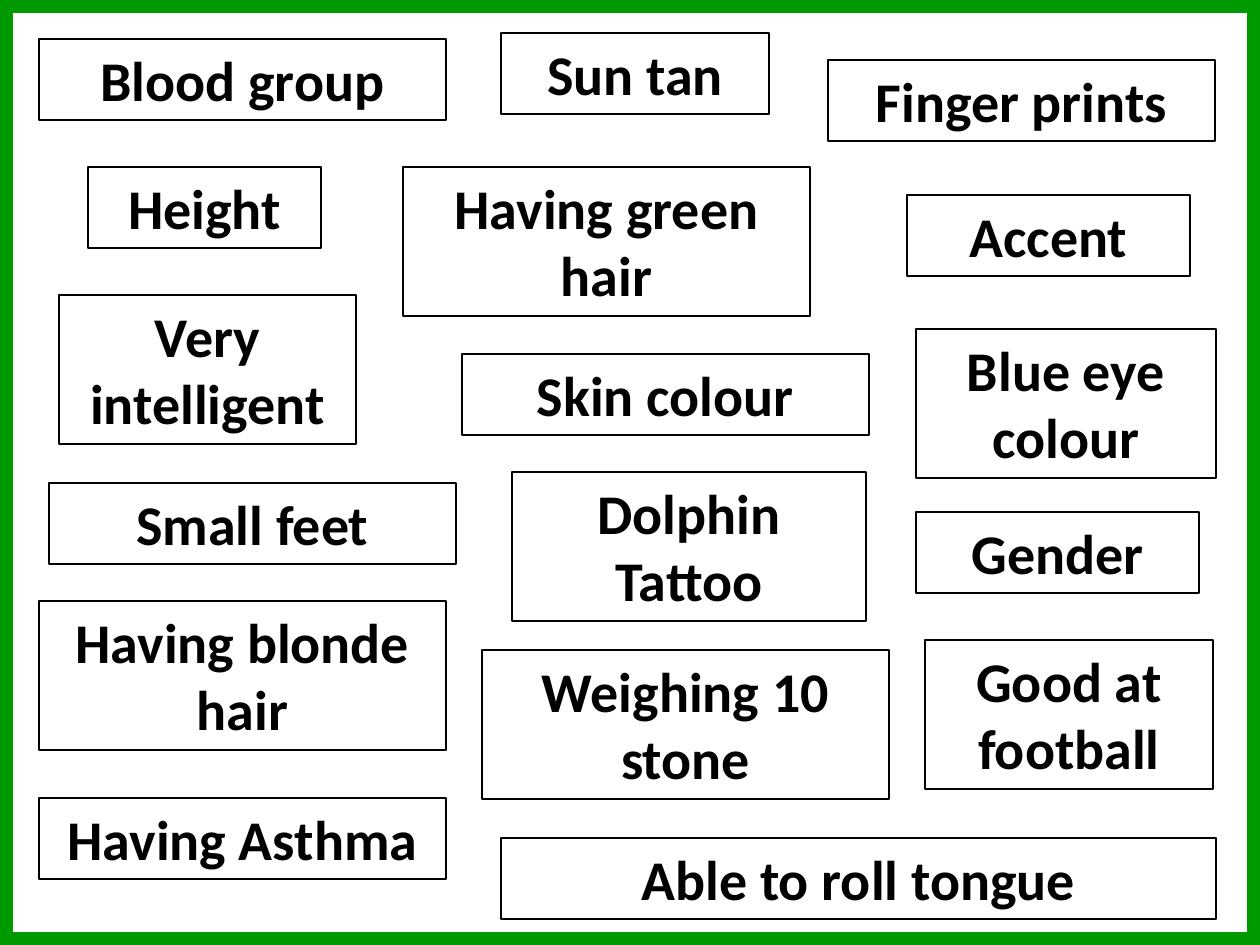
from typing import NamedTuple

from pptx import Presentation
from pptx.dml.color import RGBColor
from pptx.enum.shapes import MSO_SHAPE
from pptx.enum.text import MSO_ANCHOR, MSO_AUTO_SIZE, PP_ALIGN
from pptx.util import Emu, Inches, Pt

PX_PER_INCH = 126
PAGE_WIDTH, PAGE_HEIGHT = 1260, 945
LINE_HEIGHT, BOX_PADDING = 68, 13
COLOURS = {"ink": "000000", "frame": "009900"}


class Trait(NamedTuple):
    text: str
    left: int
    top: int
    width: int
    lines: int = 1


TRAITS = [
    Trait("Blood group", 39, 39, 407),
    Trait("Sun tan", 501, 33, 268),
    Trait("Finger prints", 828, 60, 387),
    Trait("Height", 88, 167, 233),
    Trait("Having green hair", 403, 167, 407, 2),
    Trait("Very intelligent", 59, 295, 297, 2),
    Trait("Accent", 907, 195, 283),
    Trait("Skin colour", 462, 354, 407),
    Trait("Blue eye colour", 916, 329, 300, 2),
    Trait("Small feet", 49, 483, 407),
    Trait("Dolphin Tattoo", 512, 472, 354, 2),
    Trait("Gender", 916, 512, 283),
    Trait("Having blonde hair", 39, 601, 407, 2),
    Trait("Good at football", 925, 640, 288, 2),
    Trait("Weighing 10 stone", 482, 650, 407, 2),
    Trait("Having Asthma", 39, 798, 407),
    Trait("Able to roll tongue", 501, 838, 715),
]


def px(length: int) -> Emu:
    return Emu(round(length * Inches(1) / PX_PER_INCH))


def colour(name: str) -> RGBColor:
    return RGBColor.from_string(COLOURS[name])


def add_outline(page, left: int, top: int, width: int, height: int,
                line_colour: str, line_width: float):
    """Add an unfilled rectangle with a coloured outline."""
    box = page.shapes.add_shape(
        MSO_SHAPE.RECTANGLE, px(left), px(top), px(width), px(height))
    box.shadow.inherit = False
    box.fill.background()
    box.line.color.rgb = colour(line_colour)
    box.line.width = Pt(line_width)
    return box


def add_trait(page, trait: Trait) -> None:
    """Add one outlined box with its centred bold label."""
    height = trait.lines * LINE_HEIGHT + BOX_PADDING
    box = add_outline(page, trait.left, trait.top, trait.width, height, "ink", 0.75)
    frame = box.text_frame
    frame.word_wrap = True
    frame.auto_size = MSO_AUTO_SIZE.SHAPE_TO_FIT_TEXT
    frame.vertical_anchor = MSO_ANCHOR.TOP
    para = frame.paragraphs[0]
    para.alignment = PP_ALIGN.CENTER
    span = para.add_run()
    span.text = trait.text
    span.font.name = "Calibri"
    span.font.size = Pt(32)
    span.font.bold = True
    span.font.color.rgb = colour("ink")


def main() -> None:
    deck = Presentation()
    deck.slide_width, deck.slide_height = px(PAGE_WIDTH), px(PAGE_HEIGHT)
    page = deck.slides.add_slide(deck.slide_layouts[6])

    # Trait boxes
    for trait in TRAITS:
        add_trait(page, trait)

    # Green frame around the page
    add_outline(page, 0, 0, PAGE_WIDTH, PAGE_HEIGHT, "frame", 15)

    deck.save("out.pptx")


if __name__ == "__main__":
    main()
